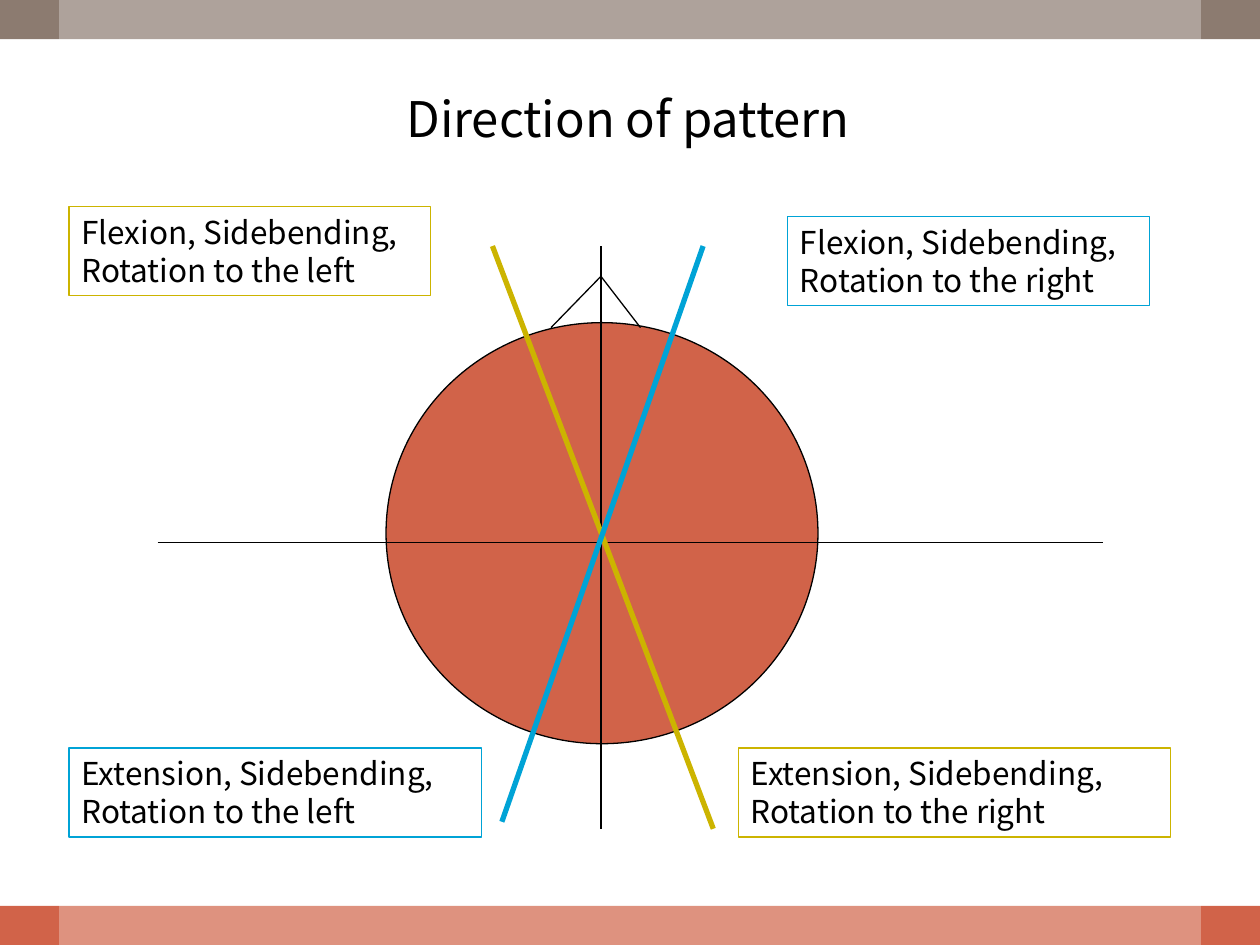
import pptx
import pptx.dml.color
import pptx.enum.shapes
import pptx.enum.text
import pptx.oxml
import pptx.oxml.ns
import pptx.util

Pt = pptx.util.Pt
SHAPES = pptx.enum.shapes.MSO_SHAPE
FONT = "Noto Sans CJK KR"
WIDTH, HEIGHT = 720, 540
COLOURS = {
    "ink": "000000",
    "veil": "FFFFFF",
    "taupe": "8C7B70",
    "terracotta": "D16349",
    "mustard": "CCB400",
    "blue": "00A3D6",
}


def colour(name):
    """Return the named colour as an RGBColor."""
    return pptx.dml.color.RGBColor.from_string(COLOURS[name])


def add_figure(slide, kind, box, fill=None, line=None):
    """Add a shadowless preset shape in a (left, top, width, height) box."""
    figure = slide.shapes.add_shape(kind, *map(Pt, box))
    figure.shadow.inherit = False
    if fill:
        figure.fill.solid()
        figure.fill.fore_color.rgb = colour(fill)
    else:
        figure.fill.background()
    if line:
        figure.line.color.rgb = colour(line)
        figure.line.width = Pt(0.75)
    else:
        figure.line.fill.background()
    return figure


def add_line(slide, start, end, name="ink", weight=0.75):
    """Draw a straight shadowless line between two points."""
    line = slide.shapes.add_connector(
        pptx.enum.shapes.MSO_CONNECTOR.STRAIGHT, *map(Pt, start + end))
    line.line.color.rgb = colour(name)
    line.line.width = Pt(weight)
    pptx.oxml.ns.qn("a:effectLst")
    line._element.spPr.append(pptx.oxml.parse_xml(
        f"<a:effectLst {pptx.oxml.ns.nsdecls('a')}/>"))


def write(paragraph, wording, size):
    """Add one run of black text to a paragraph."""
    run = paragraph.add_run()
    run.text = wording
    run.font.name = FONT
    run.font.size = Pt(size)
    run.font.color.rgb = colour("ink")


def add_frame(slide, box):
    """Place the top and bottom bars, lightened between their end blocks."""
    left, top, width, height = box
    bar, end = 22.4, 33.8
    add_figure(slide, SHAPES.RECTANGLE,
               (left, top + height - bar, width, bar), "terracotta")
    add_figure(slide, SHAPES.RECTANGLE, (left, top, width, bar), "taupe")
    veil = add_figure(slide, SHAPES.RECTANGLE,
                      (left + end, top, width - 2 * end, height), "veil")
    tint = veil._element.spPr.find(".//" + pptx.oxml.ns.qn("a:srgbClr"))
    tint.append(pptx.oxml.parse_xml(
        f"<a:alpha {pptx.oxml.ns.nsdecls('a')} val='30000'/>"))


def add_head(slide, box):
    """Draw the head from above with its nose, axes and two diagonals."""
    left, top, width, height = box
    right, bottom = left + width, top + height
    middle, axis = left + 253.4, top + 169.2
    add_figure(slide, SHAPES.OVAL,
               (left + 130.6, top + 43.8, 246.8, 240.6), "terracotta", "ink")
    add_line(slide, (left, axis), (right, axis))
    add_line(slide, (middle, top), (middle, bottom))
    nose = (middle, top + 17.3)
    add_line(slide, (middle - 28.5, top + 46.6), nose)
    add_line(slide, nose, (middle + 22.6, top + 46.6))
    add_line(slide, (middle - 62, top), (middle + 64.2, bottom), "mustard", 3)
    add_line(slide, (middle + 58.4, top), (middle - 56.6, bottom - 4), "blue", 3)


def add_label(slide, box, wording, line):
    """Place an outlined description of one movement."""
    label = add_figure(slide, SHAPES.RECTANGLE, box, line=line)
    frame = label.text_frame
    frame.word_wrap = True
    frame.vertical_anchor = pptx.enum.text.MSO_ANCHOR.TOP
    frame.paragraphs[0].alignment = pptx.enum.text.PP_ALIGN.LEFT
    write(frame.paragraphs[0], wording, 18)


def add_title(slide, box, wording):
    """Fill the title placeholder and bring it to the front."""
    title = slide.shapes.title
    title.left, title.top, title.width, title.height = map(Pt, box)
    frame = title.text_frame
    frame.word_wrap = True
    frame.vertical_anchor = pptx.enum.text.MSO_ANCHOR.MIDDLE
    frame.paragraphs[0].alignment = pptx.enum.text.PP_ALIGN.CENTER
    write(frame.paragraphs[0], wording, 28)
    slide.shapes._spTree.append(title._element)


def main():
    """Build and save the slide."""
    deck = pptx.Presentation()
    deck.slide_width, deck.slide_height = Pt(WIDTH), Pt(HEIGHT)
    slide = deck.slides.add_slide(deck.slide_layouts[5])
    add_frame(slide, (0, 0, WIDTH, HEIGHT))
    add_head(slide, (90, 140.6, 540, 333))
    labels = [
        ("Flexion", "right", "blue", 450, 123.8, 206.8),
        ("Extension", "right", "mustard", 421.9, 427.5, 247),
        ("Flexion", "left", "mustard", 39.4, 118.1, 206.8),
        ("Extension", "left", "blue", 39.4, 427.5, 235.6),
    ]
    for movement, side, line, left, top, width in labels:
        add_label(slide, (left, top, width, 50.9),
                  f"{movement}, Sidebending, Rotation to the {side}", line)
    add_title(slide, (22.3, 22.3, 673.2, 90), "Direction of pattern")
    deck.save("out.pptx")


if __name__ == "__main__":
    main()
